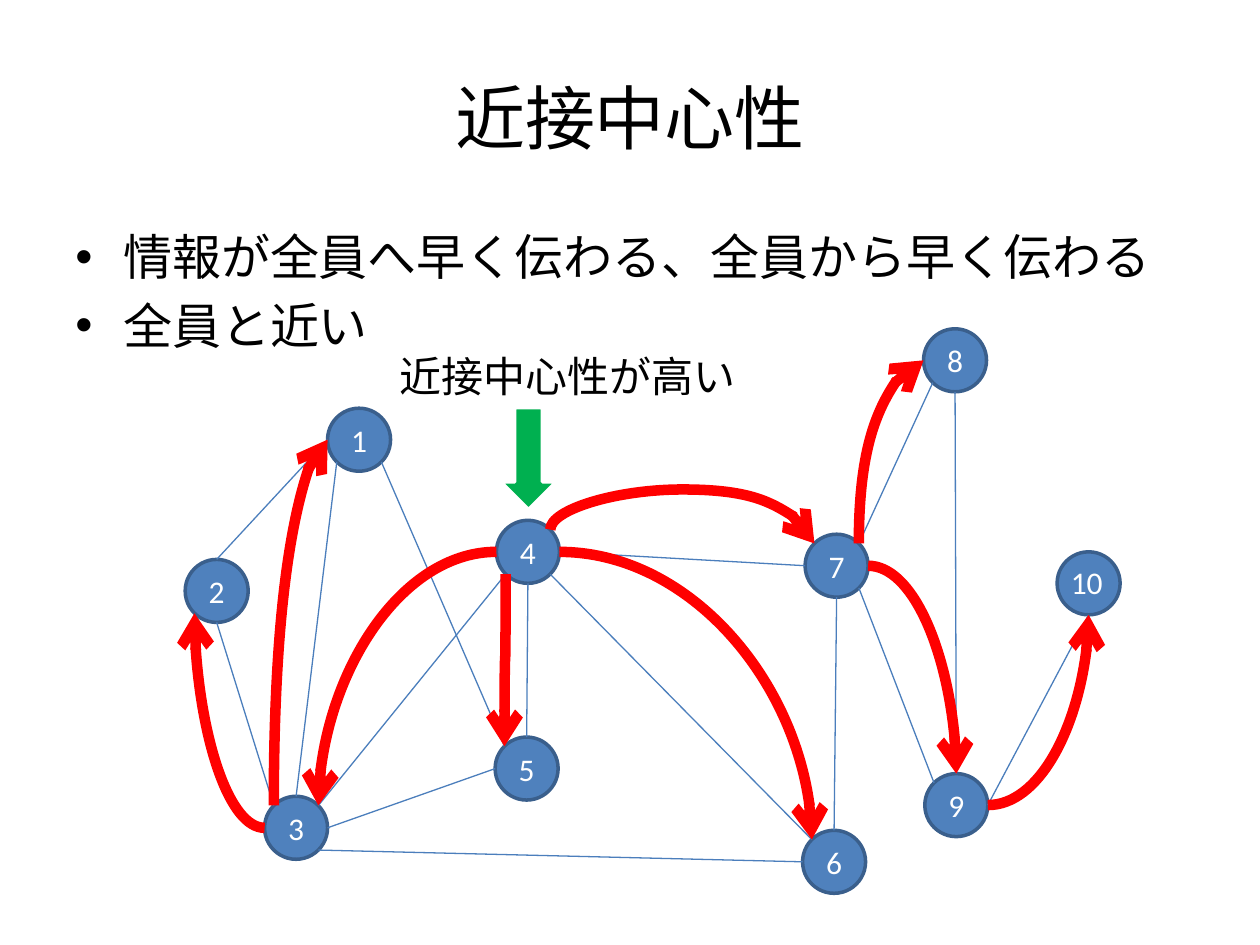
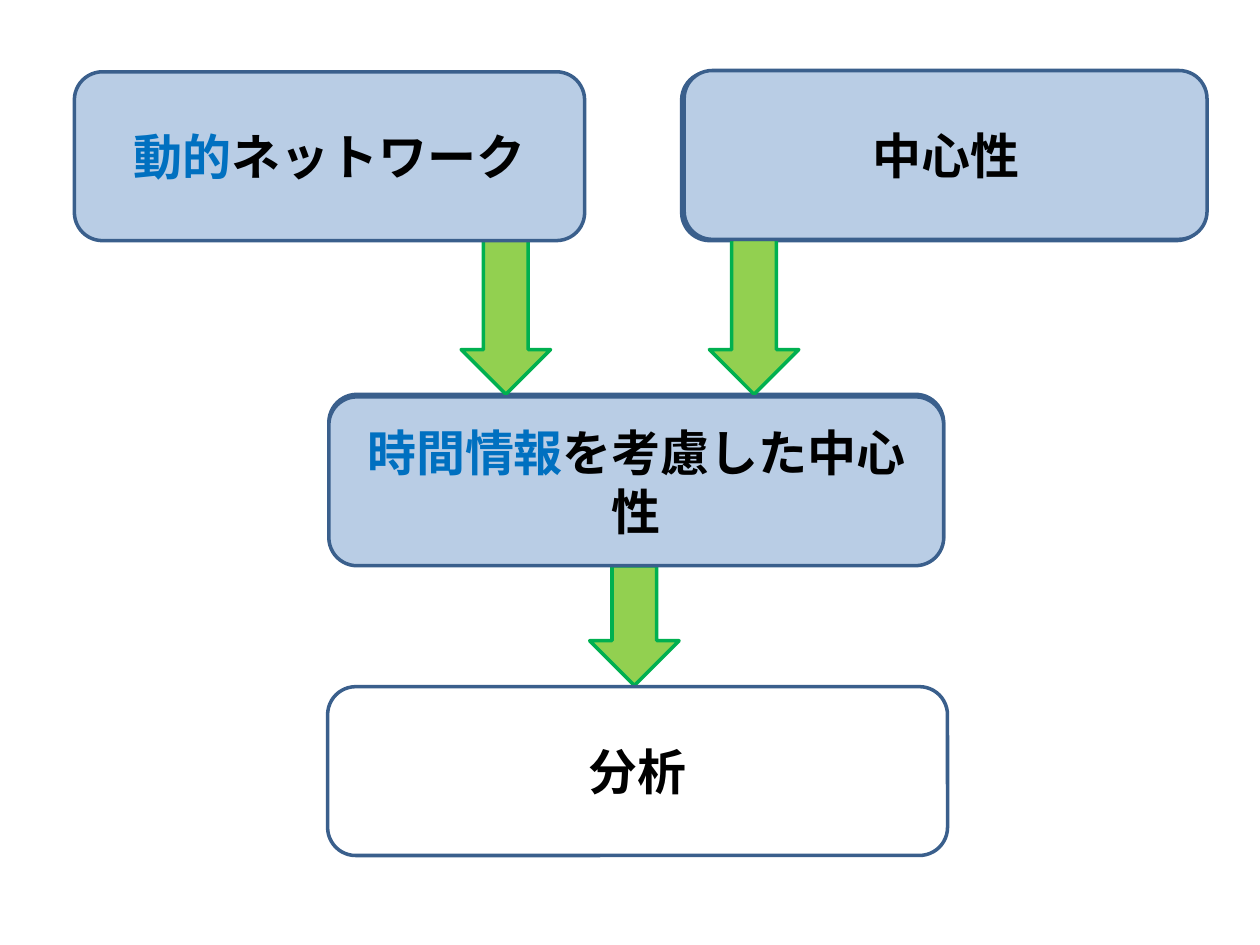
import pptx
import pptx.util
import pptx.dml.color
import pptx.enum.shapes
import pptx.enum.text
import pptx.oxml.ns
import lxml.etree
import math

Inches = pptx.util.Inches
Pt = pptx.util.Pt
SHAPES = pptx.enum.shapes.MSO_SHAPE
CONNECTORS = pptx.enum.shapes.MSO_CONNECTOR
ALIGN = pptx.enum.text.PP_ALIGN
ANCHOR = pptx.enum.text.MSO_ANCHOR
qn = pptx.oxml.ns.qn

# Shared look
FONT = "Calibri"
COLORS = {
    "text": "000000", "white": "FFFFFF", "accent": "0070C0",
    "node": "4F81BD", "outline": "3A5F8C", "edge": "4B7EBC",
    "path": "FF0000", "pointer": "00B050", "box": "B9CDE5",
    "flow": "92D050", "flow_outline": "00B050",
}
SLIDE_WIDTH, SLIDE_HEIGHT = 10, 7.5
MARGIN = 0.05 * SLIDE_WIDTH

# Slide 1 content
TITLE = "近接中心性"
BULLETS = ["情報が全員へ早く伝わる、全員から早く伝わる", "全員と近い"]
POINTER_LABEL = "近接中心性が高い"
NODE_SIZE = 0.5
NODE_CENTERS = {
    7: (6.64, 4.49), 1: (2.85, 3.49), 6: (6.62, 6.84), 3: (2.35, 6.57),
    10: (8.64, 4.63), 4: (4.19, 4.38), 5: (4.18, 6.1), 2: (1.72, 4.69),
    9: (7.59, 6.39), 8: (7.58, 2.86),
}
# Angles of the joints on a node's rim, clockwise from the right
JOINTS = {
    "right": 0, "bottom right": 45, "bottom": 90, "bottom left": 135,
    "left": 180, "top left": 225, "top": 270, "top right": 315,
}
# Node and joint at the start, node and joint at the end
EDGES = [
    (1, "bottom right", 5, "top left"), (5, "left", 3, "right"),
    (3, "top left", 2, "bottom"), (7, "left", 4, "right"),
    (6, "left", 3, "bottom right"), (4, "bottom left", 3, "top right"),
    (4, "bottom right", 6, "top left"), (9, "top", 8, "bottom"),
    (9, "right", 10, "bottom"), (1, "left", 2, "top"),
    (1, "bottom left", 3, "top"), (7, "top right", 8, "bottom left"),
    (7, "bottom right", 9, "top left"), (7, "bottom", 6, "top"),
    (5, "top", 4, "bottom"),
]
# As for edges, then the leaving direction and the bend share of an S-curve
PATHS = [
    (4, "top right", 7, "top left", "vertical", -2.9),
    (4, "left", 3, "top right", "horizontal", None),
    (3, "left", 2, "bottom left", "horizontal", None),
    (3, "top left", 1, "left", "vertical", None),
    (4, "bottom left", 5, "top left", "vertical", 0.5),
    (4, "right", 6, "top left", "horizontal", None),
    (7, "right", 9, "top", "horizontal", None),
    (7, "top right", 8, "left", "vertical", None),
    (9, "right", 10, "bottom", "horizontal", None),
]

# Slide 2 content: highlighted words, other words, left, top, width
BOX_HEIGHT = 1.34
BOXES = [
    ("", "分析", 2.6, 5.45, 4.92, None),
    ("動的", "ネットワーク", 0.59, 0.57, 4.05, "box"),
    ("時間情報", "を考慮した中心性", 2.61, 3.15, 4.88, "box"),
    ("", "中心性", 5.43, 0.56, 4.15, "box"),
]
# Thin second outlines: left, top, width
BACK_OUTLINES = [(5.41, 0.57, 4.15), (2.61, 3.13, 4.88)]
FLOW_WIDTH = 0.71
# Left, top, height
FLOWS = [(5.63, 1.9, 1.23), (4.68, 4.49, 0.95), (3.66, 1.9, 1.23)]


def rgb(name):
    return pptx.dml.color.RGBColor.from_string(COLORS[name])


def write(shape, paragraphs, size=18, bold=False, align=ALIGN.LEFT,
          anchor=ANCHOR.TOP, bullet=False, wrap=True):
    """Each paragraph is a list of (text, color name) runs."""
    frame = shape.text_frame
    frame.word_wrap = wrap
    frame.vertical_anchor = anchor
    for index, runs in enumerate(paragraphs):
        paragraph = frame.add_paragraph() if index else frame.paragraphs[0]
        paragraph.alignment = align
        for text, color in runs:
            run = paragraph.add_run()
            run.text = text
            run.font.name = FONT
            run.font.size = Pt(size)
            run.font.bold = bold
            run.font.color.rgb = rgb(color)
        if bullet:
            paragraph.space_before = Pt(0.2 * size)
            properties = paragraph._p.get_or_add_pPr()
            properties.set("marL", str(Inches(0.38)))
            properties.set("indent", str(-Inches(0.38)))
            lxml.etree.SubElement(properties, qn("a:buFont")).set("typeface", "Arial")
            lxml.etree.SubElement(properties, qn("a:buChar")).set("char", "•")


def add_text(slide, box, paragraphs, **text_format):
    shape = slide.shapes.add_textbox(*map(Inches, box))
    write(shape, paragraphs, **text_format)


def add_block(slide, kind, box, fill, line):
    shape = slide.shapes.add_shape(kind, *map(Inches, box))
    shape.shadow.inherit = False
    if fill:
        shape.fill.solid()
        shape.fill.fore_color.rgb = rgb(fill)
    else:
        shape.fill.background()
    shape.line.color.rgb = rgb(line)
    shape.line.width = Pt(2)
    return shape


def joint_point(node, joint):
    angle = math.radians(JOINTS[joint])
    x, y = NODE_CENTERS[node]
    return x + NODE_SIZE / 2 * math.cos(angle), y + NODE_SIZE / 2 * math.sin(angle)


def add_link(slide, kind, start, end, color, width):
    link = slide.shapes.add_connector(kind, *map(Inches, start + end))
    link.line.color.rgb = rgb(color)
    link.line.width = Pt(width)
    lxml.etree.SubElement(link._element.spPr, qn("a:effectLst"))
    return link


def add_path(slide, start, end, leaving, bend):
    link = add_link(slide, CONNECTORS.CURVE, start, end, "path", 6)
    across, down = end[0] - start[0], end[1] - start[1]
    width, height = abs(across), abs(down)
    if leaving == "vertical":
        width, height = height, width
        turned = bend is not None and bend < 0
        rotation = 270 if turned else 90
        flip_h, flip_v = (down < 0) != turned, (across > 0) != turned
    else:
        turned = across < 0
        rotation = 180 if turned else 0
        flip_h, flip_v = False, (down < 0) != turned

    # The frame turns about the midpoint of both ends
    link.left = Inches((start[0] + end[0] - width) / 2)
    link.top = Inches((start[1] + end[1] - height) / 2)
    link.width, link.height = Inches(width), Inches(height)
    properties = link._element.spPr
    frame = properties.find(qn("a:xfrm"))
    frame.set("rot", str(rotation * 60000))
    frame.set("flipH", str(int(flip_h)))
    frame.set("flipV", str(int(flip_v)))

    geometry = properties.find(qn("a:prstGeom"))
    if bend is None:
        geometry.set("prst", "curvedConnector2")
    else:
        guides = geometry.find(qn("a:avLst"))
        guide = lxml.etree.SubElement(guides, qn("a:gd"))
        guide.set("name", "adj1")
        guide.set("fmla", f"val {round(bend * 100000)}")
    line = properties.find(qn("a:ln"))
    lxml.etree.SubElement(line, qn("a:tailEnd")).set("type", "arrow")


def build_network(slide):
    # Heading and bullets
    content_width = SLIDE_WIDTH - 2 * MARGIN
    add_text(slide, (MARGIN, 0.3, content_width, 1.25), [[(TITLE, "text")]],
             size=40, align=ALIGN.CENTER, anchor=ANCHOR.MIDDLE)
    add_text(slide, (MARGIN, 1.75, content_width, 1.29),
             [[(bullet, "text")] for bullet in BULLETS], size=28, bullet=True)

    # Pointer to the central node
    pointer = add_block(slide, SHAPES.RIGHT_ARROW, (3.79, 3.42, 0.81, 0.44),
                        "pointer", "white")
    pointer.rotation = 90
    add_text(slide, (3.07, 2.73, 3.05, 0.5), [[(POINTER_LABEL, "text")]], size=24)

    # Nodes; a two-digit number needs a wider frame of its own
    for number, (x, y) in NODE_CENTERS.items():
        box = (x - NODE_SIZE / 2, y - NODE_SIZE / 2, NODE_SIZE, NODE_SIZE)
        node = add_block(slide, SHAPES.OVAL, box, "node", "outline")
        if number < 10:
            write(node, [[(str(number), "white")]],
                  align=ALIGN.CENTER, anchor=ANCHOR.MIDDLE)

    # Edges, then the paths over them
    for first, first_joint, last, last_joint in EDGES:
        add_link(slide, CONNECTORS.STRAIGHT, joint_point(first, first_joint),
                 joint_point(last, last_joint), "edge", 0.75)
    add_text(slide, (8.4, 4.42, 0.5, 0.4), [[("10", "white")]], wrap=False)
    for first, first_joint, last, last_joint, leaving, bend in PATHS:
        add_path(slide, joint_point(first, first_joint),
                 joint_point(last, last_joint), leaving, bend)


def build_flow(slide):
    for left, top, width in BACK_OUTLINES:
        add_block(slide, SHAPES.ROUNDED_RECTANGLE, (left, top, width, BOX_HEIGHT),
                  None, "outline")
    for left, top, height in FLOWS:
        add_block(slide, SHAPES.DOWN_ARROW, (left, top, FLOW_WIDTH, height),
                  "flow", "flow_outline")
    for highlight, rest, left, top, width, fill in BOXES:
        box = add_block(slide, SHAPES.ROUNDED_RECTANGLE,
                        (left, top, width, BOX_HEIGHT), fill, "outline")
        runs = [(highlight, "accent")] if highlight else []
        write(box, [runs + [(rest, "text")]], size=28, bold=True,
              align=ALIGN.CENTER, anchor=ANCHOR.MIDDLE)


def main():
    presentation = pptx.Presentation()
    presentation.slide_width = Inches(SLIDE_WIDTH)
    presentation.slide_height = Inches(SLIDE_HEIGHT)
    for build in (build_network, build_flow):
        build(presentation.slides.add_slide(presentation.slide_layouts[6]))
    presentation.save("out.pptx")


if __name__ == "__main__":
    main()
